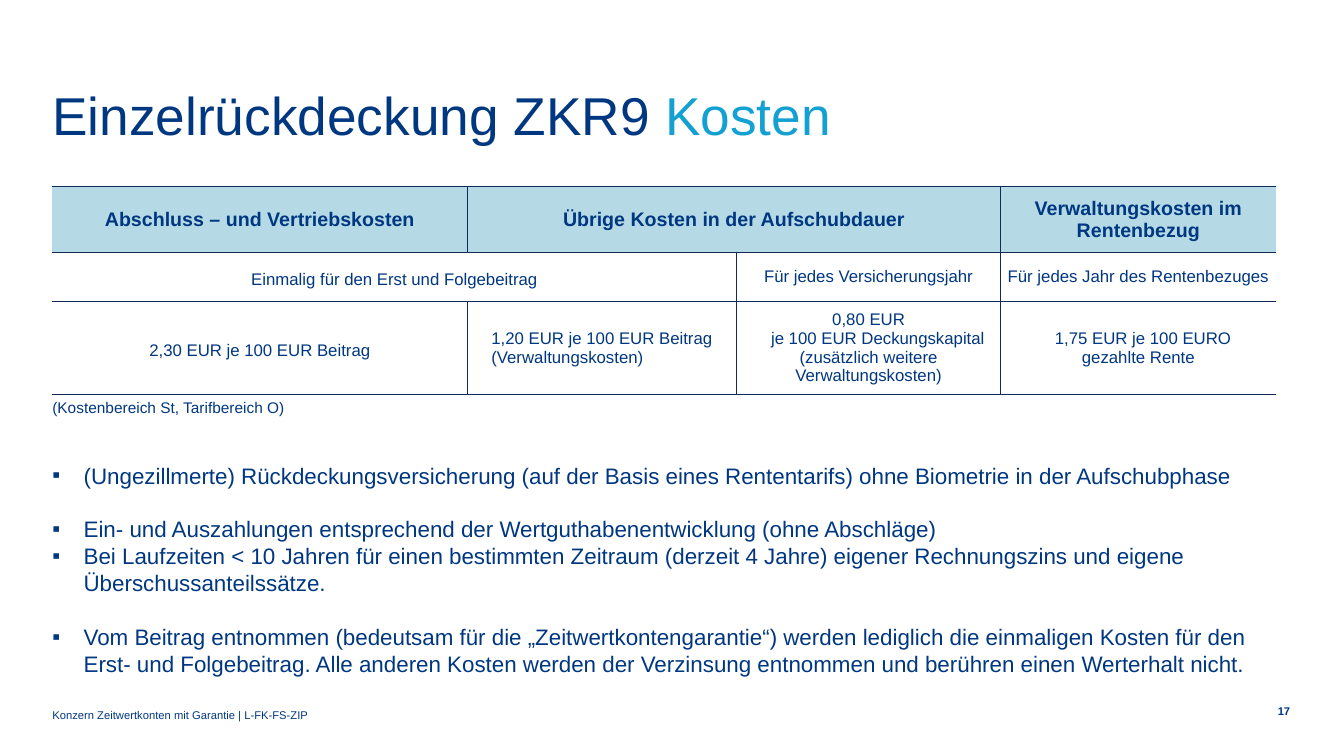
from dataclasses import dataclass
from typing import Optional

from lxml import etree
from pptx import Presentation
from pptx.dml.color import RGBColor
from pptx.enum.text import MSO_ANCHOR, PP_ALIGN
from pptx.oxml.ns import qn
from pptx.util import Pt

LEFT, CENTER, RIGHT = PP_ALIGN.LEFT, PP_ALIGN.CENTER, PP_ALIGN.RIGHT
TOP, MIDDLE, BOTTOM = MSO_ANCHOR.TOP, MSO_ANCHOR.MIDDLE, MSO_ANCHOR.BOTTOM

COLORS = {
    "navy": "003781",
    "cyan": "13A0D3",
    "header": "B5DAE6",
    "white": "FFFFFF",
    "border": "122B54",
}
FONT = "Arial"
MARGIN_LEFT = 37.4
CONTENT_WIDTH = 874.2
CELL_INSET = 2.88
COLUMN_WIDTHS = (296.6, 192.2, 188.6, 196.8)
ROW_HEIGHTS = (46.8, 35.3, 66.2)
BULLET_INDENT = 22.4
BULLET_LINE = 19.2


@dataclass
class Line:
    text: str
    indent: float = 0
    space_before: float = 0
    accent: str = ""


@dataclass
class CostCell:
    row: int
    column: int
    lines: list[Line]
    span: int = 1
    align: PP_ALIGN = CENTER
    inset_left: float = CELL_INSET
    line_spacing: Optional[Pt] = None


@dataclass
class TextBlock:
    left: float
    top: float
    width: float
    height: float
    lines: list[Line]
    size: float
    bold: bool = False
    align: PP_ALIGN = LEFT
    anchor: MSO_ANCHOR = TOP
    line_spacing: float | Pt | None = None
    bullet: str = ""


COST_CELLS = [
    CostCell(0, 0, [Line("Abschluss – und Vertriebskosten")]),
    CostCell(0, 1, [Line("Übrige Kosten in der Aufschubdauer")], span=2),
    CostCell(0, 3, [Line("Verwaltungskosten im Rentenbezug")]),
    CostCell(1, 0, [Line("Einmalig für den Erst und Folgebeitrag")], span=2,
             line_spacing=Pt(18)),
    CostCell(1, 2, [Line("Für jedes Versicherungsjahr")]),
    CostCell(1, 3, [Line("Für jedes Jahr des Rentenbezuges")]),
    CostCell(2, 0, [Line("2,30 EUR je 100 EUR Beitrag")], line_spacing=Pt(18)),
    CostCell(2, 1, [Line("1,20 EUR je 100 EUR Beitrag (Verwaltungskosten)")],
             align=LEFT, inset_left=17),
    CostCell(2, 2, [
        Line("0,80 EUR"),
        Line("je 100 EUR Deckungskapital", indent=13.3),
        Line("(zusätzlich weitere Verwaltungskosten)"),
    ]),
    CostCell(2, 3, [
        Line("1,75 EUR je 100 EURO", indent=6.7),
        Line("gezahlte Rente"),
    ]),
]

TEXT_BLOCKS = [
    TextBlock(MARGIN_LEFT, 66.2, 734.4, 73.4,
              [Line("Einzelrückdeckung ZKR9 ", accent="Kosten")],
              size=38, line_spacing=Pt(38)),
    TextBlock(900.7, 501.8, 20.9, 11.5, [Line("17")], size=8, bold=True,
              align=RIGHT, anchor=MIDDLE, line_spacing=Pt(10)),
    TextBlock(MARGIN_LEFT, 488.2, 734.4, 27.4,
              [Line("Konzern Zeitwertkonten mit Garantie | L-FK-FS-ZIP")],
              size=8, anchor=BOTTOM, line_spacing=0.9),
    TextBlock(MARGIN_LEFT, 284.4, 276.5, 23.8,
              [Line("(Kostenbereich St, Tarifbereich O)")], size=11),
    TextBlock(MARGIN_LEFT, 329.8, CONTENT_WIDTH, 172.1, [
        Line("(Ungezillmerte) Rückdeckungsversicherung (auf der Basis eines "
             "Rententarifs) ohne Biometrie in der Aufschubphase", BULLET_INDENT),
        Line("Ein- und Auszahlungen entsprechend der Wertguthabenentwicklung "
             "(ohne Abschläge)", BULLET_INDENT, BULLET_LINE),
        Line("Bei Laufzeiten < 10 Jahren für einen bestimmten Zeitraum (derzeit "
             "4 Jahre) eigener Rechnungszins und eigene Überschussanteilssätze.",
             BULLET_INDENT),
        Line("Vom Beitrag entnommen (bedeutsam für die „Zeitwertkontengarantie“) "
             "werden lediglich die einmaligen Kosten für den Erst- und "
             "Folgebeitrag. Alle anderen Kosten werden der Verzinsung entnommen "
             "und berühren einen Werterhalt nicht.", BULLET_INDENT, BULLET_LINE),
    ], size=16, line_spacing=Pt(BULLET_LINE), bullet="▪"),
]


def color(name: str) -> RGBColor:
    return RGBColor.from_string(COLORS[name])


def write_text(text_frame, lines: list[Line], *, size: float, bold: bool = False,
               align: PP_ALIGN = LEFT, line_spacing: float | Pt | None = None,
               bullet: str = "") -> None:
    for index, line in enumerate(lines):
        paragraph = text_frame.paragraphs[0] if index == 0 else text_frame.add_paragraph()
        properties = paragraph._p.get_or_add_pPr()
        if line.indent:
            properties.set("marL", str(Pt(line.indent)))
            properties.set("indent", str(-Pt(line.indent) if bullet else 0))
        if bullet:
            etree.SubElement(properties, qn("a:buFont"), typeface=FONT)
            etree.SubElement(properties, qn("a:buChar"), char=bullet)
        paragraph.alignment = align
        paragraph.line_spacing = line_spacing
        paragraph.space_before = Pt(line.space_before)
        for text, color_name in ((line.text, "navy"), (line.accent, "cyan")):
            if text:
                run = paragraph.add_run()
                run.text = text
                run.font.name = FONT
                run.font.size = Pt(size)
                run.font.bold = bold
                run.font.color.rgb = color(color_name)


def add_text_block(slide, block: TextBlock) -> None:
    shape = slide.shapes.add_textbox(
        Pt(block.left), Pt(block.top), Pt(block.width), Pt(block.height))
    text_frame = shape.text_frame
    text_frame.word_wrap = True
    text_frame.vertical_anchor = block.anchor
    text_frame.margin_left = text_frame.margin_right = Pt(0)
    text_frame.margin_top = text_frame.margin_bottom = Pt(0)
    write_text(text_frame, block.lines, size=block.size, bold=block.bold,
               align=block.align, line_spacing=block.line_spacing, bullet=block.bullet)


def set_borders(cell, widths: dict[str, float]) -> None:
    properties = cell._tc.get_or_add_tcPr()
    for position, (side, width) in enumerate(widths.items()):
        border = etree.Element(qn(f"a:ln{side}"), w=str(Pt(width)))
        if width:
            fill = etree.SubElement(border, qn("a:solidFill"))
            etree.SubElement(fill, qn("a:srgbClr"), val=COLORS["border"])
        else:
            etree.SubElement(border, qn("a:noFill"))
        properties.insert(position, border)


def add_cost_table(slide) -> None:
    frame = slide.shapes.add_table(
        len(ROW_HEIGHTS), len(COLUMN_WIDTHS), Pt(MARGIN_LEFT), Pt(133.2),
        Pt(CONTENT_WIDTH), Pt(sum(ROW_HEIGHTS)))
    table = frame.table
    table.first_row = table.horz_banding = False
    for column, width in zip(table.columns, COLUMN_WIDTHS):
        column.width = Pt(width)
    for row, height in zip(table.rows, ROW_HEIGHTS):
        row.height = Pt(height)
    for item in COST_CELLS:
        is_header = item.row == 0
        last = item.column + item.span - 1
        cell = table.cell(item.row, item.column)
        if item.span > 1:
            cell.merge(table.cell(item.row, last))
        cell.vertical_anchor = MIDDLE
        cell.margin_left = Pt(item.inset_left)
        cell.margin_right = cell.margin_top = cell.margin_bottom = Pt(CELL_INSET)
        write_text(cell.text_frame, item.lines, size=14 if is_header else 12,
                   bold=is_header, align=item.align, line_spacing=item.line_spacing)
        for column in range(item.column, last + 1):
            part = table.cell(item.row, column)
            part.fill.solid()
            part.fill.fore_color.rgb = color("header" if is_header else "white")
            set_borders(part, {
                "L": 0.5 if 0 < column == item.column else 0,
                "R": 0.5 if column == last < len(COLUMN_WIDTHS) - 1 else 0,
                "T": 1 if is_header else 0.5,
                "B": 0.5,
            })


def main() -> None:
    presentation = Presentation()
    presentation.slide_width, presentation.slide_height = Pt(960), Pt(540)
    slide = presentation.slides.add_slide(presentation.slide_layouts[6])
    add_cost_table(slide)
    for block in TEXT_BLOCKS:
        add_text_block(slide, block)
    presentation.save("out.pptx")


if __name__ == "__main__":
    main()
